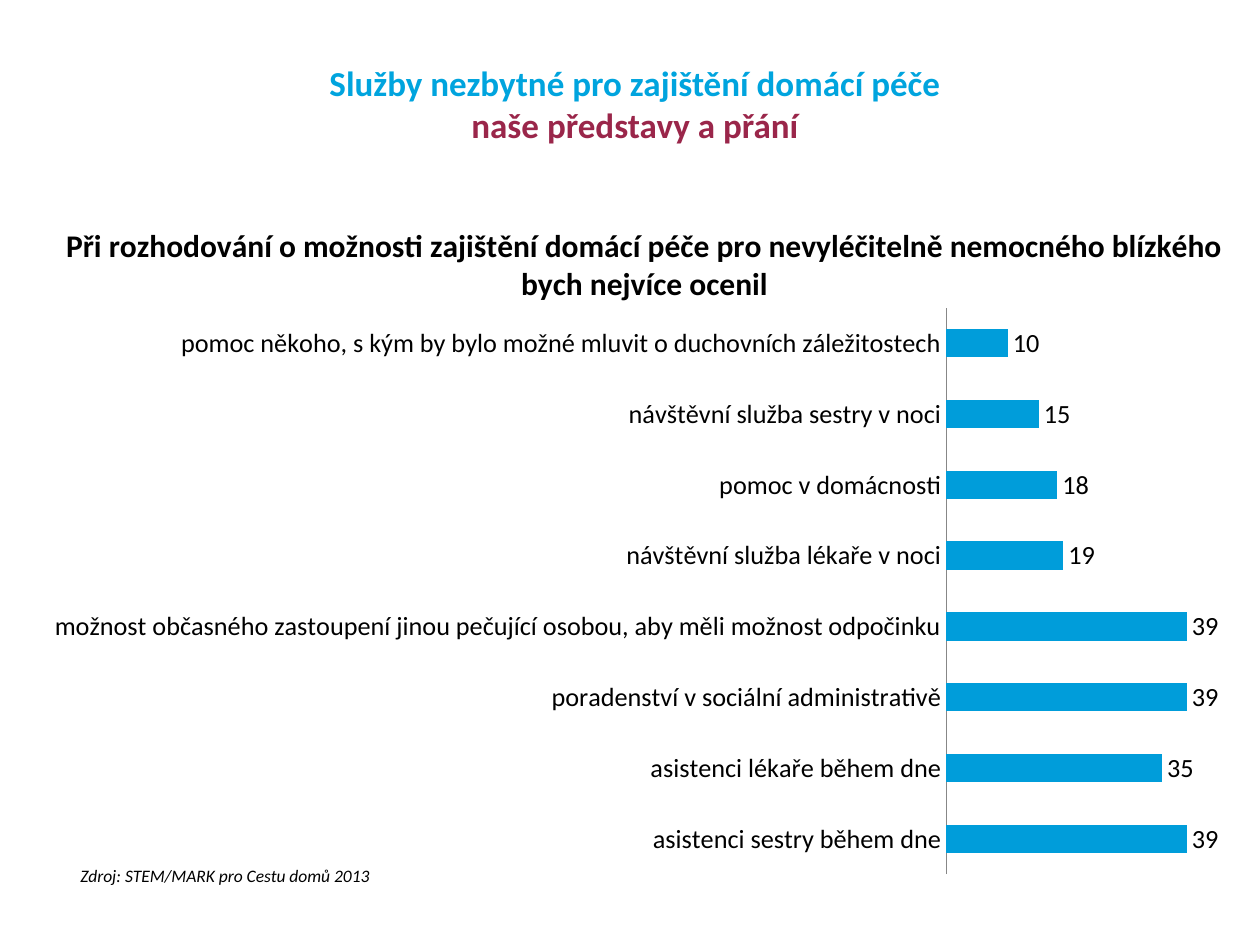
from dataclasses import dataclass

from pptx import Presentation
from pptx.chart.data import CategoryChartData
from pptx.dml.color import RGBColor
from pptx.enum.chart import XL_CHART_TYPE, XL_LABEL_POSITION, XL_TICK_MARK
from pptx.enum.text import MSO_ANCHOR, MSO_AUTO_SIZE, PP_ALIGN
from pptx.oxml import parse_xml
from pptx.oxml.ns import qn
from pptx.util import Pt

BAR_CLUSTERED = XL_CHART_TYPE.BAR_CLUSTERED
OUTSIDE_END = XL_LABEL_POSITION.OUTSIDE_END
NO_TICKS = XL_TICK_MARK.NONE
MIDDLE = MSO_ANCHOR.MIDDLE
NO_AUTOFIT = MSO_AUTO_SIZE.NONE
CENTER = PP_ALIGN.CENTER
RIGHT = PP_ALIGN.RIGHT

FONT = "Calibri"
COLORS = {
    "blue": "00A4DE",
    "wine": "9A264A",
    "bar": "009DDA",
    "axis": "878787",
    "text": "000000",
}
CHART_NAMESPACE = "http://schemas.openxmlformats.org/drawingml/2006/chart"


@dataclass(frozen=True)
class Box:
    left: float
    top: float
    width: float
    height: float

    def lengths(self) -> tuple:
        return Pt(self.left), Pt(self.top), Pt(self.width), Pt(self.height)


@dataclass(frozen=True)
class Line:
    text: str
    size: float
    color: str = "text"
    bold: bool = False
    italic: bool = False


@dataclass(frozen=True)
class Service:
    name: str
    percent: int


TITLE_BOX = Box(36.7, 31.7, 652.3, 55.4)
CHART_BOX = Box(-377.3, 122.4, 1086.5, 399.6)
SOURCE_BOX = Box(31, 491, 187.2, 19.4)

TITLE_LINES = [
    Line("Služby nezbytné pro zajištění domácí péče", 20, "blue", bold=True),
    Line("naše představy a přání", 20, "wine", bold=True),
]
QUESTION_LINES = [
    Line("Při rozhodování o možnosti zajištění domácí péče pro nevyléčitelně nemocného blízkého", 18, bold=True),
    Line("bych nejvíce ocenil", 18, bold=True),
]
SOURCE_LINES = [Line("Zdroj: STEM/MARK pro Cestu domů 2013", 10, italic=True)]

# Bars run from the bottom up
SERVICES = [
    Service("asistenci sestry během dne", 39),
    Service("asistenci lékaře během dne", 35),
    Service("poradenství v sociální administrativě", 39),
    Service("možnost občasného zastoupení jinou pečující osobou, aby měli možnost odpočinku", 39),
    Service("návštěvní služba lékaře v noci", 19),
    Service("pomoc v domácnosti", 18),
    Service("návštěvní služba sestry v noci", 15),
    Service("pomoc někoho, s kým by bylo možné mluvit o duchovních záležitostech", 10),
]


def rgb(name: str) -> RGBColor:
    return RGBColor.from_string(COLORS[name])


def write_lines(text_frame, lines: list[Line], alignment) -> None:
    for index, line in enumerate(lines):
        paragraph = text_frame.paragraphs[0] if index == 0 else text_frame.add_paragraph()
        paragraph.alignment = alignment
        run = paragraph.add_run()
        run.text = line.text
        run.font.name = FONT
        run.font.size = Pt(line.size)
        run.font.bold = line.bold
        run.font.italic = line.italic
        run.font.color.rgb = rgb(line.color)


def place(shape, box: Box) -> None:
    shape.left, shape.top, shape.width, shape.height = box.lengths()


def manual_layout(target: str, **fractions: float):
    """Chart layout with positions as fractions of the chart frame."""
    modes = "".join(f'<c:{axis}Mode val="edge"/>' for axis in "xy")
    values = "".join(f'<c:{key} val="{value}"/>' for key, value in fractions.items())
    return parse_xml(
        f'<c:layout xmlns:c="{CHART_NAMESPACE}"><c:manualLayout>'
        f"{target}{modes}{values}</c:manualLayout></c:layout>"
    )


def remove_layout(element) -> None:
    for layout in element.findall(qn("c:layout")):
        element.remove(layout)


def add_services_chart(slide, box: Box) -> None:
    data = CategoryChartData()
    data.categories = [service.name for service in SERVICES]
    data.add_series(
        " ".join(line.text for line in QUESTION_LINES),
        [service.percent for service in SERVICES],
    )
    chart = slide.shapes.add_chart(BAR_CLUSTERED, *box.lengths(), data).chart
    chart.has_legend = False
    chart.font.name = FONT
    chart.font.size = Pt(15)
    chart.font.color.rgb = rgb("text")

    # Question as the chart title
    chart.has_title = True
    write_lines(chart.chart_title.text_frame, QUESTION_LINES, CENTER)
    chart.chart_title.include_in_layout = False
    title = chart.chart_title._element
    remove_layout(title)
    title.find(qn("c:tx")).addnext(manual_layout("", x=0.38, y=0.01))

    # Plot area
    plot_area = chart._chartSpace.chart.plotArea
    remove_layout(plot_area)
    plot_area.insert(
        0,
        manual_layout('<c:layoutTarget val="inner"/>', x=0.845, y=0.134, w=0.146, h=0.81),
    )

    # Axes
    category_axis = chart.category_axis
    category_axis.major_tick_mark = NO_TICKS
    category_axis.minor_tick_mark = NO_TICKS
    category_axis.has_major_gridlines = False
    category_axis.format.line.color.rgb = rgb("axis")
    category_axis.format.line.width = Pt(0.75)
    value_axis = chart.value_axis
    value_axis.minimum_scale = 0
    value_axis.maximum_scale = 45
    value_axis.has_major_gridlines = False
    value_axis.visible = False

    # Bars and value labels
    plot = chart.plots[0]
    plot.gap_width = 150
    plot.overlap = -25
    plot.vary_by_categories = False
    fill = plot.series[0].format.fill
    fill.solid()
    fill.fore_color.rgb = rgb("bar")
    plot.has_data_labels = True
    plot.data_labels.show_value = True
    plot.data_labels.position = OUTSIDE_END


def main() -> None:
    presentation = Presentation()
    presentation.slide_width = Pt(720)
    presentation.slide_height = Pt(540)
    slide = presentation.slides.add_slide(presentation.slide_layouts[5])

    # Title
    title = slide.shapes.title
    place(title, TITLE_BOX)
    title.text_frame.auto_size = NO_AUTOFIT
    title.text_frame.vertical_anchor = MIDDLE
    write_lines(title.text_frame, TITLE_LINES, CENTER)

    add_services_chart(slide, CHART_BOX)

    # Source note
    source = slide.shapes.add_textbox(*SOURCE_BOX.lengths())
    source.text_frame.word_wrap = True
    write_lines(source.text_frame, SOURCE_LINES, RIGHT)

    presentation.save("out.pptx")


if __name__ == "__main__":
    main()
